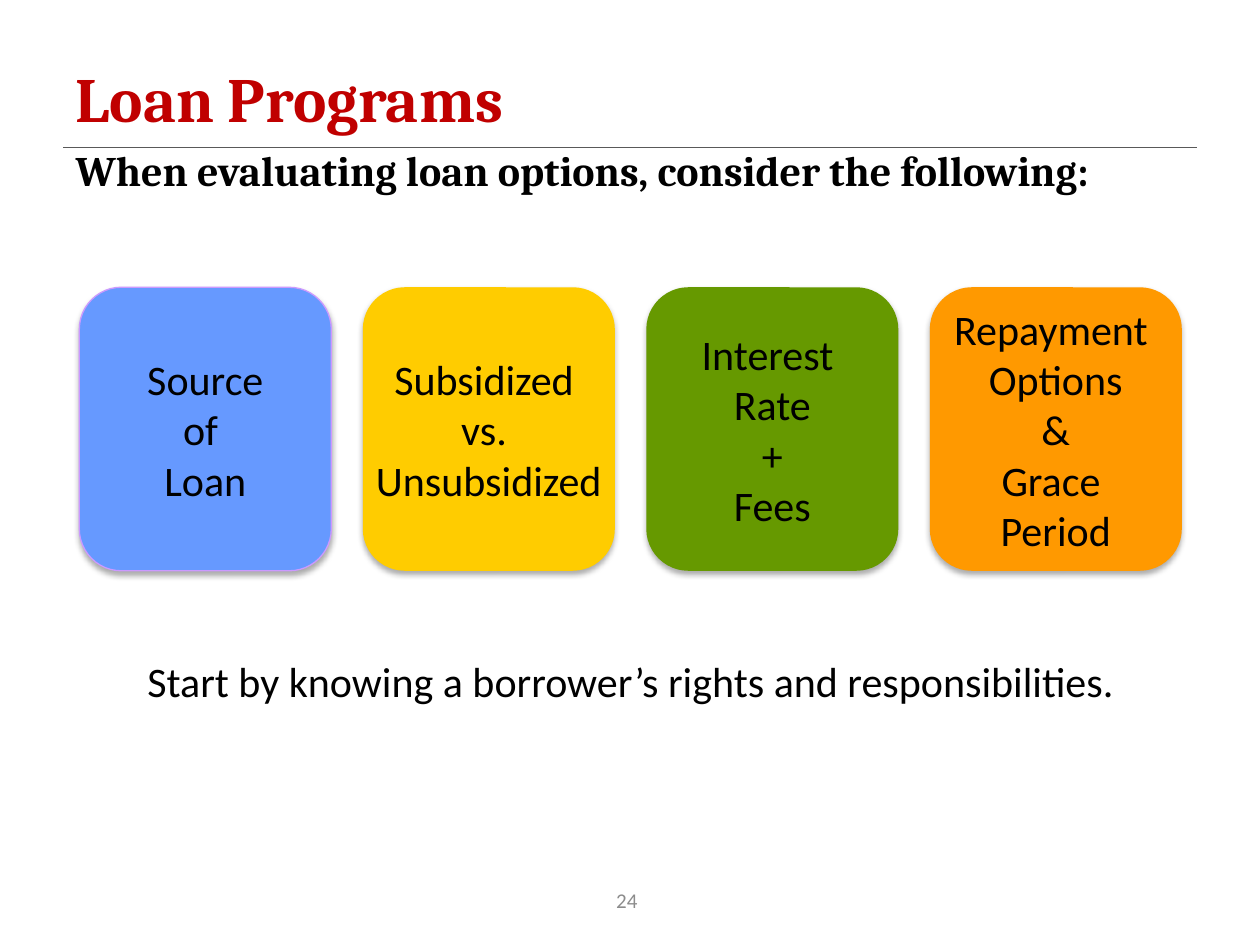
from lxml import etree
from pptx import Presentation
from pptx.dml.color import RGBColor
from pptx.enum.shapes import MSO_CONNECTOR, MSO_SHAPE
from pptx.enum.text import MSO_ANCHOR, MSO_AUTO_SIZE, PP_ALIGN
from pptx.oxml import parse_xml
from pptx.oxml.ns import nsdecls, qn
from pptx.util import Inches, Pt

LEFT, CENTER = PP_ALIGN.LEFT, PP_ALIGN.CENTER
TOP, MIDDLE = MSO_ANCHOR.TOP, MSO_ANCHOR.MIDDLE
NO_FIT = MSO_AUTO_SIZE.NONE
STRAIGHT = MSO_CONNECTOR.STRAIGHT
ROUNDED = MSO_SHAPE.ROUNDED_RECTANGLE

BLACK = RGBColor(0x00, 0x00, 0x00)
RED = RGBColor(0xC0, 0x00, 0x00)
RULE_GRAY = RGBColor(0x59, 0x59, 0x59)
NUMBER_GRAY = RGBColor(0x8C, 0x8C, 0x8C)
BLUE = RGBColor(0x66, 0x99, 0xFF)
LILAC = RGBColor(0xCC, 0x99, 0xFF)
YELLOW = RGBColor(0xFF, 0xCC, 0x00)
GREEN = RGBColor(0x66, 0x99, 0x00)
ORANGE = RGBColor(0xFF, 0x99, 0x00)

HEADING_FONT, TEXT_FONT = "Cambria", "Calibri"

# Each card: fill, outline, paragraphs ("\n" is a line break)
CARDS = [
    (BLUE, LILAC, ["Source", "of \nLoan"]),
    (YELLOW, None, ["Subsidized ", "vs. ", "Unsubsidized"]),
    (GREEN, None, ["Interest ", "Rate", "+", "Fees"]),
    (ORANGE, None, ["Repayment ", "Options", "&", "Grace ", "Period"]),
]


def place(shape, box):
    shape.left, shape.top, shape.width, shape.height = (Inches(n) for n in box)


def add_run(para, text, size, color, font=TEXT_FONT, bold=False):
    span = para.add_run()
    span.text = text
    span.font.size = Pt(size)
    span.font.name = font
    span.font.bold = bold
    span.font.color.rgb = color


def fill_line(shape, text, size, color, font=TEXT_FONT, bold=False,
              align=CENTER, anchor=TOP):
    """Write one paragraph into a placeholder or text box."""
    frame = shape.text_frame
    frame.word_wrap = True
    frame.auto_size = NO_FIT
    frame.vertical_anchor = anchor
    para = frame.paragraphs[0]
    para.alignment = align
    add_run(para, text, size, color, font, bold)
    return para


def add_text(page, box, text, size, color, anchor=TOP):
    shape = page.shapes.add_textbox(*(Inches(n) for n in box))
    return fill_line(shape, text, size, color, anchor=anchor)


def add_heading(page, box):
    """Title, rule and lead sentence, stacked in the box."""
    left, top, width, height = box
    title, lead = page.placeholders

    # Rule below the title
    rule_y = Inches(top + 0.67)
    rule = page.shapes.add_connector(
        STRAIGHT, Inches(left), rule_y, Inches(left + width), rule_y)
    rule.line.color.rgb = RULE_GRAY
    rule.line.width = Pt(0.75)
    etree.SubElement(rule._element.spPr, qn("a:effectLst"))

    # Title
    place(title, (left, top, width, 0.62))
    para = fill_line(title, "Loan Programs", 36, RED, HEADING_FONT, True,
                     LEFT, MIDDLE)
    para.line_spacing = 0.9

    # Lead sentence, without the template's bullet
    place(lead, (left, top + 0.6, width, height - 0.6))
    para = lead.text_frame.paragraphs[0]
    properties = para._p.get_or_add_pPr()
    properties.set("marL", "0")
    properties.set("indent", "0")
    etree.SubElement(properties, qn("a:buNone"))
    para.space_before = Pt(0)
    para.space_after = Pt(6)
    fill_line(lead, "When evaluating loan options, consider the following:",
              24, BLACK, HEADING_FONT, True, LEFT)


def add_soft_shadow(shape):
    shape._element.spPr.append(parse_xml(
        f'<a:effectLst {nsdecls("a")}>'
        f'<a:outerShdw blurRad="{Pt(3.5)}" dist="{Pt(2.2)}" dir="5400000" '
        'rotWithShape="0"><a:srgbClr val="000000"><a:alpha val="32000"/>'
        '</a:srgbClr></a:outerShdw></a:effectLst>'))


def add_card(page, box, fill, outline, paragraphs):
    card = page.shapes.add_shape(ROUNDED, *(Inches(n) for n in box))
    card.fill.solid()
    card.fill.fore_color.rgb = fill
    if outline is None:
        card.line.fill.background()
    else:
        card.line.color.rgb = outline
        card.line.width = Pt(0.75)
    add_soft_shadow(card)

    frame = card.text_frame
    frame.word_wrap = False
    frame.vertical_anchor = MIDDLE
    for index, text in enumerate(paragraphs):
        para = frame.add_paragraph() if index else frame.paragraphs[0]
        para.alignment = CENTER
        for part, line in enumerate(text.split("\n")):
            if part:
                para.add_line_break()
            add_run(para, line, 24, BLACK)


def add_cards(page, box, gap=0.25):
    """Equal cards in a row across the box."""
    left, top, width, height = box
    card_width = (width - gap * (len(CARDS) - 1)) / len(CARDS)
    for index, card in enumerate(CARDS):
        card_left = left + index * (card_width + gap)
        add_card(page, (card_left, top, card_width, height), *card)


def main():
    deck = Presentation()
    deck.slide_width, deck.slide_height = Inches(10), Inches(7.5)
    page = deck.slides.add_slide(deck.slide_layouts[1])

    add_heading(page, (0.5, 0.5, 9, 1.13))
    add_cards(page, (0.63, 2.28, 8.75, 2.25))

    # Closing sentence and page number
    closing = add_text(
        page, (0.63, 5.2, 8.75, 0.47),
        "Start by knowing a borrower’s rights and responsibilities.",
        24, BLACK)
    closing.line_spacing = 0.9
    add_text(page, (4.06, 6.79, 1.83, 0.71), "24", 12, NUMBER_GRAY, MIDDLE)

    deck.save("out.pptx")


if __name__ == "__main__":
    main()
